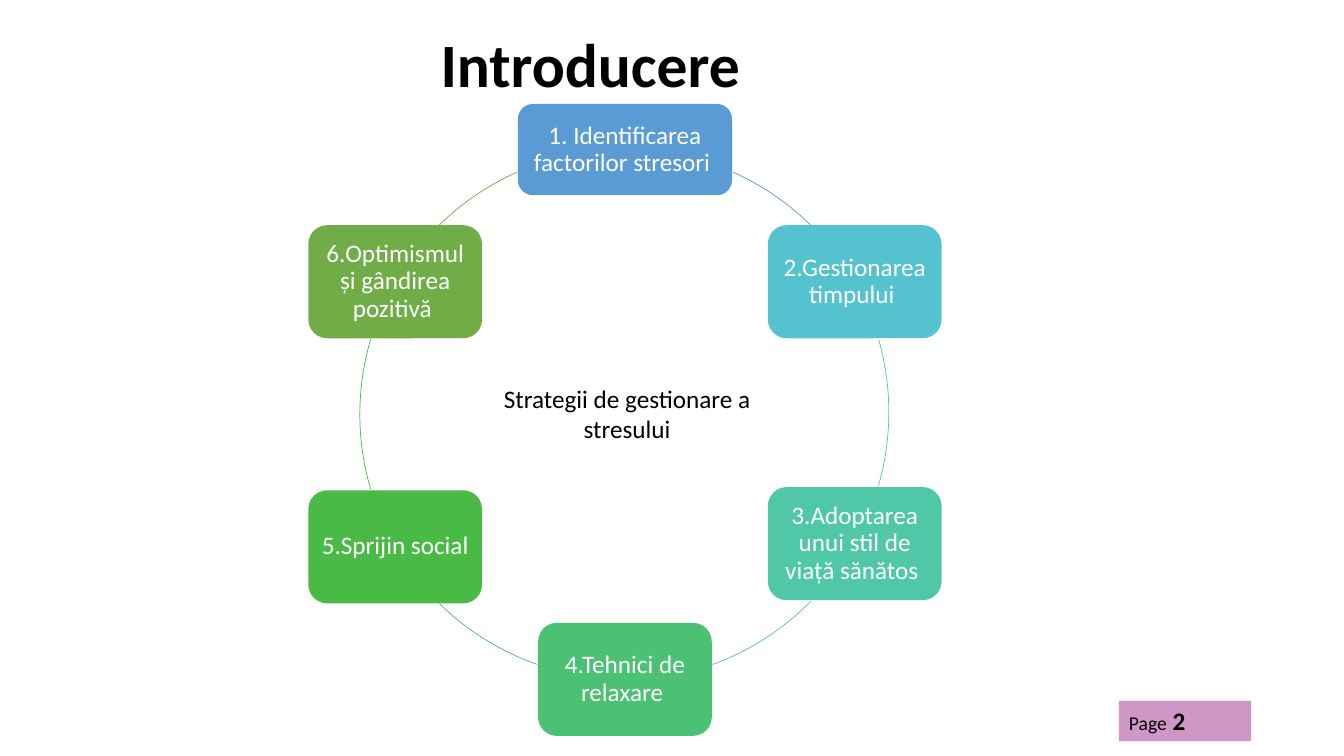
from dataclasses import dataclass

from lxml.etree import SubElement
from pptx import Presentation
from pptx.dml.color import RGBColor
from pptx.enum.shapes import MSO_SHAPE
from pptx.enum.text import MSO_ANCHOR, PP_ALIGN
from pptx.oxml.ns import qn
from pptx.shapes.autoshape import Shape
from pptx.slide import Slide
from pptx.text.text import _Paragraph
from pptx.util import Cm, Pt

FONT = "Calibri"
BLACK = RGBColor(0x00, 0x00, 0x00)
WHITE = RGBColor(0xFF, 0xFF, 0xFF)
BLUE = RGBColor(0x5B, 0x9B, 0xD5)
CYAN = RGBColor(0x55, 0xC3, 0xCF)
TEAL = RGBColor(0x50, 0xC8, 0xA7)
MINT = RGBColor(0x4B, 0xC1, 0x74)
GREEN = RGBColor(0x4A, 0xBA, 0x46)
OLIVE = RGBColor(0x70, 0xAD, 0x47)
PURPLE = RGBColor(0x9F, 0x31, 0x8D)

RING_X, RING_Y, RING_SIZE = 15.75, 10.44, 13.36
COLUMN_STEP = 5.79
BOX_H = 2.85
BOX_INSET = Cm(0.18)
ARC_UNITS_PER_DEGREE = 0.6


@dataclass(frozen=True)
class Strategy:
    text: str
    color: RGBColor
    column: int
    y: float
    arc_start: float
    arc_end: float
    arc_dx: float = 0
    arc_dy: float = 0
    w: float = 4.38
    h: float = BOX_H


STRATEGIES = [
    Strategy("1. Identificarea factorilor stresori ", BLUE, 0, 3.77, 294, 314.4, w=5.4, h=2.3),
    Strategy("2.Gestionarea timpului ", CYAN, 1, 7.1, 344.1, 16.1, -0.03, -0.05),
    Strategy("3.Adoptarea unui stil de viață sănătos ", TEAL, 1, 13.7, 44.4, 70, -0.08, 0.03),
    Strategy("4.Tehnici de relaxare ", MINT, 0, 17.12, 109.3, 134.4),
    Strategy("5.Sprijin social", GREEN, -1, 13.78, 163.6, 196.4),
    Strategy("6.Optimismul și gândirea pozitivă ", OLIVE, -1, 7.1, 225.6, 246),
]


def add_run(p: _Paragraph, text: str, size: float, color: RGBColor, bold: bool = False) -> None:
    r = p.add_run()
    r.text = text
    r.font.name = FONT
    r.font.size = Pt(size)
    r.font.bold = bold
    r.font.color.rgb = color


def add_text(s: Slide, x: float, y: float, w: float, h: float, text: str, size: float,
             bold: bool = False, anchor: MSO_ANCHOR = MSO_ANCHOR.TOP) -> None:
    tf = s.shapes.add_textbox(Cm(x), Cm(y), Cm(w), Cm(h)).text_frame
    tf.word_wrap = True
    tf.vertical_anchor = anchor
    p = tf.paragraphs[0]
    p.alignment = PP_ALIGN.CENTER
    add_run(p, text, size, BLACK, bold)


def add_filled(s: Slide, kind: MSO_SHAPE, x: float, y: float, w: float, h: float,
               color: RGBColor) -> Shape:
    sp = s.shapes.add_shape(kind, Cm(x), Cm(y), Cm(w), Cm(h))
    sp.shadow.inherit = False
    sp.fill.solid()
    sp.fill.fore_color.rgb = color
    sp.line.fill.background()
    return sp


def add_strategy(s: Slide, item: Strategy) -> None:
    x = RING_X + item.column * COLUMN_STEP - item.w / 2
    sp = add_filled(s, MSO_SHAPE.ROUNDED_RECTANGLE, x, item.y - item.h / 2,
                    item.w, item.h, item.color)
    tf = sp.text_frame
    tf.word_wrap = True
    tf.vertical_anchor = MSO_ANCHOR.MIDDLE
    tf.margin_left = tf.margin_right = tf.margin_top = tf.margin_bottom = BOX_INSET
    p = tf.paragraphs[0]
    p.alignment = PP_ALIGN.CENTER
    p.line_spacing = 0.9
    add_run(p, item.text, 18, WHITE)


def add_arc(s: Slide, item: Strategy) -> None:
    sp = s.shapes.add_shape(MSO_SHAPE.ARC,
                            Cm(RING_X + item.arc_dx - RING_SIZE / 2),
                            Cm(RING_Y + item.arc_dy - RING_SIZE / 2),
                            Cm(RING_SIZE), Cm(RING_SIZE))
    sp.shadow.inherit = False
    sp.fill.background()
    sp.line.color.rgb = item.color
    sp.line.width = Pt(0.5)
    sp.adjustments[0] = item.arc_start * ARC_UNITS_PER_DEGREE
    sp.adjustments[1] = item.arc_end * ARC_UNITS_PER_DEGREE


def add_page_label(s: Slide) -> None:
    sp = add_filled(s, MSO_SHAPE.RECTANGLE, 28.2, 17.66, 3.33, 1.02, PURPLE)
    color = next(sp.element.spPr.iter(qn("a:srgbClr")))
    SubElement(color, qn("a:alpha")).set("val", "50000")
    tf = sp.text_frame
    tf.word_wrap = True
    tf.vertical_anchor = MSO_ANCHOR.TOP
    p = tf.paragraphs[0]
    p.alignment = PP_ALIGN.LEFT
    add_run(p, "Page", 14, BLACK)
    add_run(p, " 2", 18, BLACK, True)


def main() -> None:
    prs = Presentation()
    prs.slide_width = Cm(33.87)
    prs.slide_height = Cm(19.05)
    s = prs.slides.add_slide(prs.slide_layouts[6])
    add_text(s, 0.28, 0.38, 29.2, 2.39, "Introducere", 44, True, MSO_ANCHOR.MIDDLE)
    add_page_label(s)
    for item in STRATEGIES:
        add_strategy(s, item)
        add_arc(s, item)
    add_text(s, 11.73, 9.53, 8.15, 1.8, "Strategii de gestionare a stresului", 18)
    prs.save("out.pptx")


if __name__ == "__main__":
    main()
